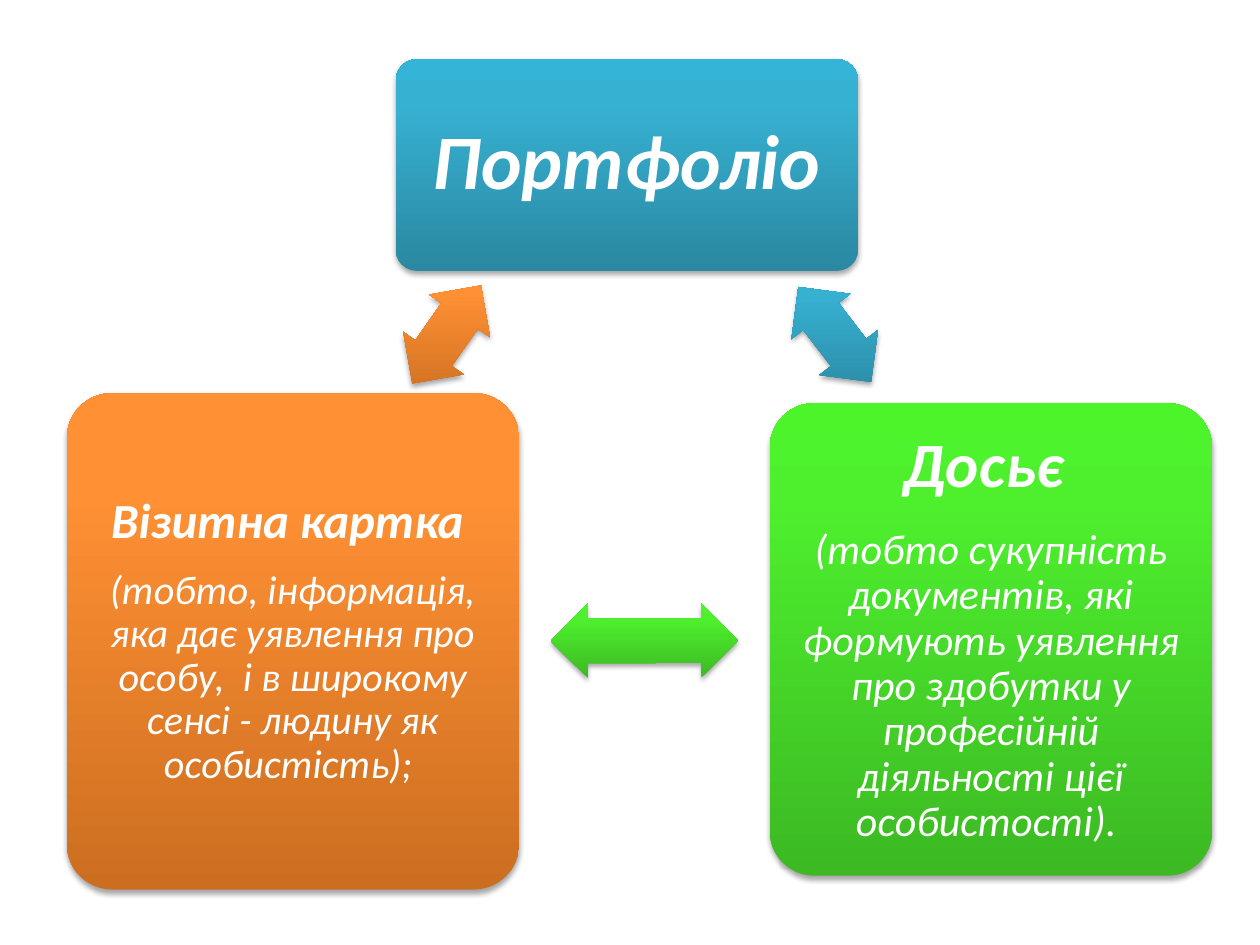
from lxml.etree import SubElement
from pptx import Presentation
from pptx.dml.color import RGBColor
from pptx.enum.shapes import MSO_SHAPE as Preset
from pptx.enum.text import MSO_ANCHOR as Anchor, PP_ALIGN as Align
from pptx.oxml.ns import qn
from pptx.util import Inches, Pt

COLUMNS, ROWS = 100, 75
# Gradient stops from bottom to top
BLUE = ("2A88A2", "37B1D2", "34B4D6")
GREEN = ("3CB923", "4EF02E", "4CF52A")
ORANGE = ("CC6E20", "FF9034", "FF9136")


def color(hex_string):
    return RGBColor.from_string(hex_string)


def add_xml(parent, tag, **attributes):
    return SubElement(parent, qn(tag), {name: str(value) for name, value in attributes.items()})


class DiagramSlide:
    """Holds the current slide and the style shared by its boxes and arrows."""

    font = "Calibri"
    text_color = "FFFFFF"
    line_spacing = 0.9
    gap_after = 0.42  # share of the text size
    stops = (0, 80, 100)

    def __init__(self, presentation):
        self.slide = presentation.slides.add_slide(presentation.slide_layouts[6])
        self.column = presentation.slide_width / COLUMNS
        self.row = presentation.slide_height / ROWS

    def add_preset(self, preset, left, top, width, height, gradient):
        shape = self.slide.shapes.add_shape(
            preset,
            round(left * self.column), round(top * self.row),
            round(width * self.column), round(height * self.row),
        )
        shape.line.fill.background()
        self.paint(shape, gradient)
        self.cast_shadow(shape)
        return shape

    def paint(self, shape, gradient):
        """Fill with an upright gradient that does not turn with the shape."""
        shape.fill.gradient()
        fill = shape.fill._xPr.find(qn("a:gradFill"))
        for child in list(fill):
            fill.remove(child)
        fill.set("rotWithShape", "0")
        stop_list = add_xml(fill, "a:gsLst")
        for position, hex_string in zip(self.stops, gradient):
            stop = add_xml(stop_list, "a:gs", pos=position * 1000)
            add_xml(stop, "a:srgbClr", val=hex_string)
        add_xml(fill, "a:lin", ang=270 * 60000, scaled=0)

    def cast_shadow(self, shape):
        shape.shadow.inherit = False
        effects = shape._element.spPr.find(qn("a:effectLst"))
        shadow = add_xml(effects, "a:outerShdw", blurRad=Pt(3.1), dist=Pt(1.8),
                         dir=90 * 60000, rotWithShape=0)
        add_xml(add_xml(shadow, "a:srgbClr", val="000000"), "a:alpha", val=35000)

    def add_box(self, left, top, width, height, gradient, inset, paragraphs):
        """Rounded box; paragraphs are (text, size, bold) triples."""
        shape = self.add_preset(Preset.ROUNDED_RECTANGLE, left, top, width, height, gradient)
        shape.adjustments[0] = 0.1
        frame = shape.text_frame
        frame.word_wrap = True
        frame.vertical_anchor = Anchor.MIDDLE
        frame.margin_left = frame.margin_right = Inches(inset)
        frame.margin_top = frame.margin_bottom = Inches(inset)
        for index, (text, size, bold) in enumerate(paragraphs):
            paragraph = frame.add_paragraph() if index else frame.paragraphs[0]
            paragraph.alignment = Align.CENTER
            paragraph.line_spacing = self.line_spacing
            paragraph.space_after = Pt(size * self.gap_after)
            run = paragraph.add_run()
            run.text = text
            run.font.name = self.font
            run.font.size = Pt(size)
            run.font.bold = bold
            run.font.italic = True
            run.font.color.rgb = color(self.text_color)

    def add_double_arrow(self, left, top, width, gradient, rotation):
        shape = self.add_preset(Preset.LEFT_RIGHT_ARROW, left, top, width, 5.9, gradient)
        shape.adjustments[0] = 0.6
        shape.adjustments[1] = 0.5
        shape.rotation = rotation


def main():
    presentation = Presentation()
    presentation.slide_width, presentation.slide_height = Inches(10), Inches(7.5)
    diagram = DiagramSlide(presentation)

    diagram.add_box(31.4, 4.7, 36.7, 16.8, BLUE, 0.18, [("Портфоліо", 44, True)])
    diagram.add_double_arrow(61.5, 23.6, 9.5, BLUE, 52.5)
    diagram.add_box(61.1, 32, 35.1, 37.5, GREEN, 0.15, [
        ("Досьє ", 36, True),
        ("(тобто сукупність документів, які формують уявлення про здобутки "
         "у професійній діяльності цієї особистості). ", 24, False),
    ])
    diagram.add_double_arrow(43.7, 47.9, 14.9, GREEN, 179.8)
    diagram.add_box(5.3, 31.2, 35.9, 39.4, ORANGE, 0.12, [
        ("Візитна картка ", 28, True),
        ("(тобто, інформація, яка дає уявлення про особу,  і в широкому "
         "сенсі - людину як особистість); ", 23, False),
    ])
    diagram.add_double_arrow(30.7, 23.6, 9.5, ORANGE, 305)

    presentation.save("out.pptx")


if __name__ == "__main__":
    main()
